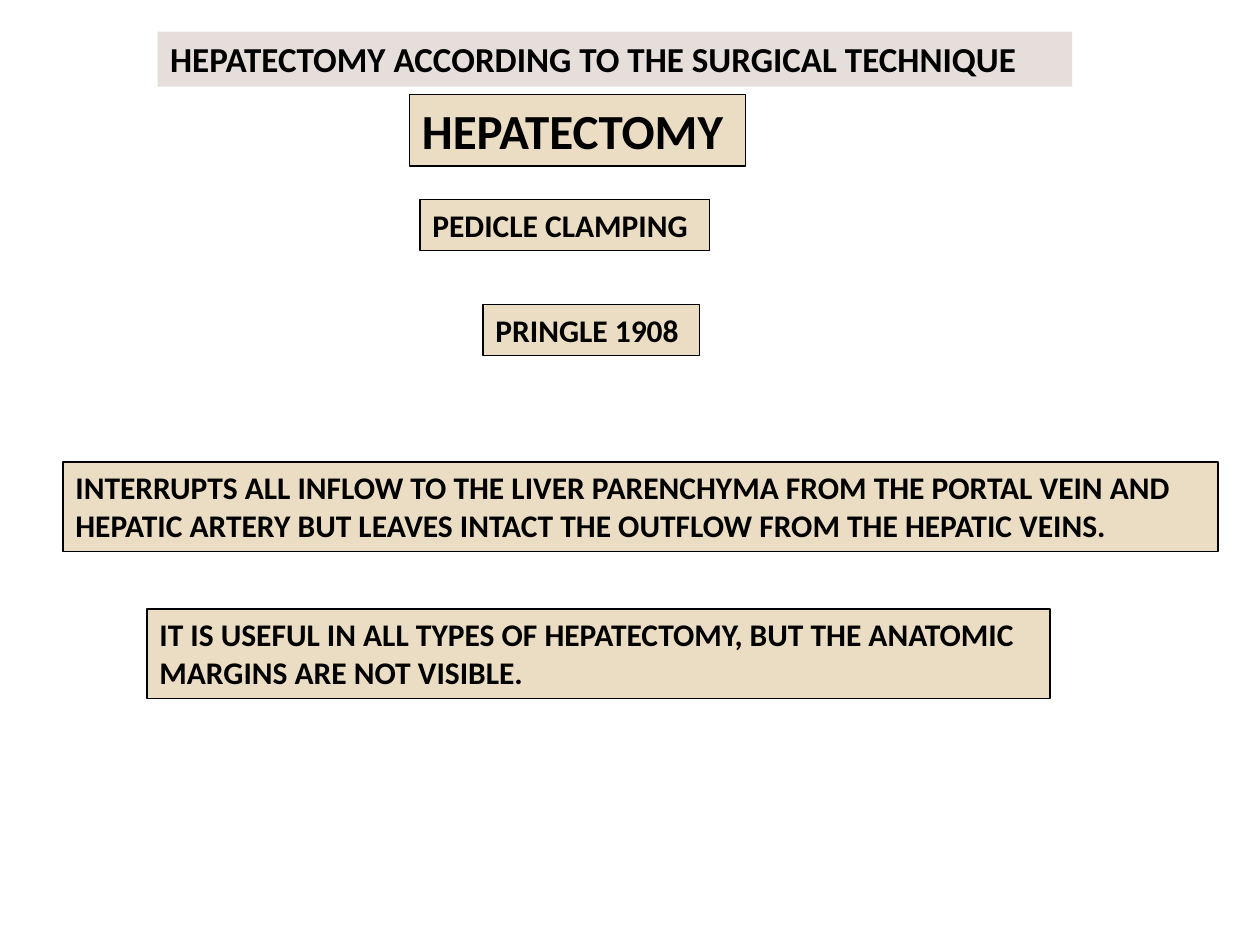
from dataclasses import dataclass

from pptx import Presentation
from pptx.dml.color import RGBColor
from pptx.enum.text import MSO_ANCHOR, MSO_AUTO_SIZE, PP_ALIGN
from pptx.shapes.autoshape import Shape
from pptx.slide import Slide
from pptx.util import Pt

TOP = MSO_ANCHOR.TOP
LEFT = PP_ALIGN.LEFT
FIXED_SIZE = MSO_AUTO_SIZE.NONE

BLACK = RGBColor(0x00, 0x00, 0x00)
ROSE = RGBColor(0xE6, 0xDE, 0xDB)
SAND = RGBColor(0xEB, 0xDD, 0xC3)
FONT = "Calibri"
TITLE_ONLY = 5


@dataclass(frozen=True)
class Panel:
    text: str
    left: float
    top: float
    width: float
    height: float
    size: float = 18


HEADING = Panel("HEPATECTOMY ACCORDING TO THE SURGICAL TECHNIQUE", 90, 18, 522.7, 31.5, 20)
PANELS = (
    Panel("HEPATECTOMY", 234, 54, 192, 41, 28),
    Panel("PEDICLE CLAMPING", 240, 114, 165.6, 29),
    Panel("PRINGLE 1908", 276, 174, 123.8, 29),
    Panel(
        "INTERRUPTS ALL INFLOW TO THE LIVER PARENCHYMA FROM THE PORTAL VEIN AND "
        "HEPATIC ARTERY BUT LEAVES INTACT THE OUTFLOW FROM THE HEPATIC VEINS.",
        36, 264, 660, 51,
    ),
    Panel(
        "IT IS USEFUL IN ALL TYPES OF HEPATECTOMY, BUT THE ANATOMIC "
        "MARGINS ARE NOT VISIBLE.",
        84, 348, 516, 51,
    ),
)


def write_panel(shape: Shape, panel: Panel, fill: RGBColor) -> None:
    shape.left, shape.top = Pt(panel.left), Pt(panel.top)
    shape.width, shape.height = Pt(panel.width), Pt(panel.height)
    shape.fill.solid()
    shape.fill.fore_color.rgb = fill
    frame = shape.text_frame
    frame.text = panel.text
    frame.word_wrap = True
    frame.auto_size = FIXED_SIZE
    frame.vertical_anchor = TOP
    paragraph = frame.paragraphs[0]
    paragraph.alignment = LEFT
    font = paragraph.runs[0].font
    font.name = FONT
    font.size = Pt(panel.size)
    font.bold = True
    font.color.rgb = BLACK


def add_panel(slide: Slide, panel: Panel) -> None:
    box = slide.shapes.add_textbox(0, 0, Pt(panel.width), Pt(panel.height))
    write_panel(box, panel, SAND)
    box.line.color.rgb = BLACK
    box.line.width = Pt(0.75)


def main() -> None:
    deck = Presentation()
    deck.slide_width, deck.slide_height = Pt(720), Pt(540)
    slide = deck.slides.add_slide(deck.slide_layouts[TITLE_ONLY])
    write_panel(slide.shapes.title, HEADING, ROSE)
    for panel in PANELS:
        add_panel(slide, panel)
    deck.save("out.pptx")


if __name__ == "__main__":
    main()
